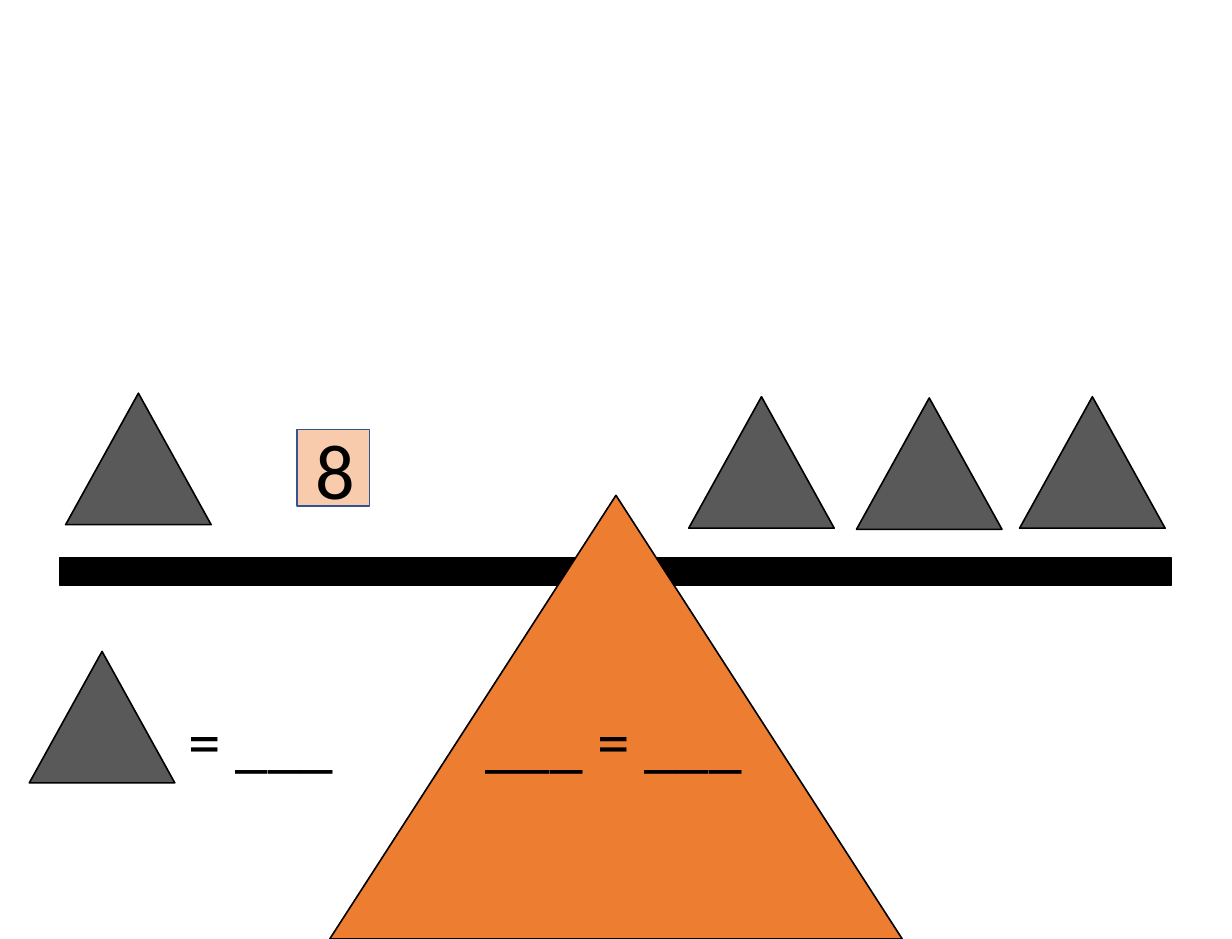
from dataclasses import dataclass

from pptx import Presentation
from pptx.dml.color import RGBColor
from pptx.enum.shapes import MSO_SHAPE
from pptx.enum.text import MSO_AUTO_SIZE, PP_ALIGN
from pptx.util import Pt

PX = 9144  # EMU per px, 100 px to the inch


@dataclass(frozen=True)
class Theme:
    font: str = "Calibri"
    ink: str = "000000"
    stand: str = "ED7D31"
    block: str = "595959"
    card: str = "F8CBAD"
    edge: str = "325491"
    digit: int = 48
    blank: int = 40
    line: int = 1


def emu(*sizes):
    return [size * PX for size in sizes]


def write(frame, text, *, font, size, color, align=PP_ALIGN.LEFT):
    para = frame.paragraphs[0]
    para.alignment = align
    run = para.add_run()
    run.text = text
    run.font.name = font
    run.font.size = Pt(size)
    run.font.color.rgb = RGBColor.from_string(color)


class Board:
    def __init__(self, slide, theme):
        self.slide = slide
        self.theme = theme

    def shape(self, kind, box, fill, line):
        item = self.slide.shapes.add_shape(kind, *emu(*box))
        item.shadow.inherit = False
        item.fill.solid()
        item.fill.fore_color.rgb = RGBColor.from_string(fill)
        item.line.color.rgb = RGBColor.from_string(line)
        item.line.width = Pt(self.theme.line)

    def rect(self, box, fill, line):
        self.shape(MSO_SHAPE.RECTANGLE, box, fill, line)

    def peak(self, box, fill):
        """Draw a triangle with a dark outline."""
        self.shape(MSO_SHAPE.ISOSCELES_TRIANGLE, box, fill, self.theme.ink)

    def text(self, box, text, size, align=PP_ALIGN.LEFT):
        frame = self.slide.shapes.add_textbox(*emu(*box)).text_frame
        frame.word_wrap = True
        frame.auto_size = MSO_AUTO_SIZE.SHAPE_TO_FIT_TEXT
        write(frame, text, font=self.theme.font, size=size,
              color=self.theme.ink, align=align)


def main():
    deck = Presentation()
    deck.slide_width, deck.slide_height = emu(1050, 800)
    theme = Theme()
    board = Board(deck.slides.add_slide(deck.slide_layouts[6]), theme)

    # Balance beam and its stand
    board.rect((51, 475, 947, 24), theme.ink, theme.ink)
    board.peak((281, 422, 488, 378), theme.stand)

    # Number card
    board.rect((253, 366, 62, 65), theme.card, theme.edge)
    board.text((256, 354, 59, 91), "8", theme.digit, PP_ALIGN.CENTER)

    # Unknown weights: three on the right, one in the key, one on the left
    for left, top in ((730, 339), (587, 338), (25, 555), (56, 335), (869, 338)):
        board.peak((left, top, 124, 112), theme.block)

    # Answer blanks
    for left, width, text in ((151, 276, "= ___"), (404, 241, "___ = ___")):
        board.text((left, 592, width, 77), text, theme.blank)

    deck.save("out.pptx")


if __name__ == "__main__":
    main()
